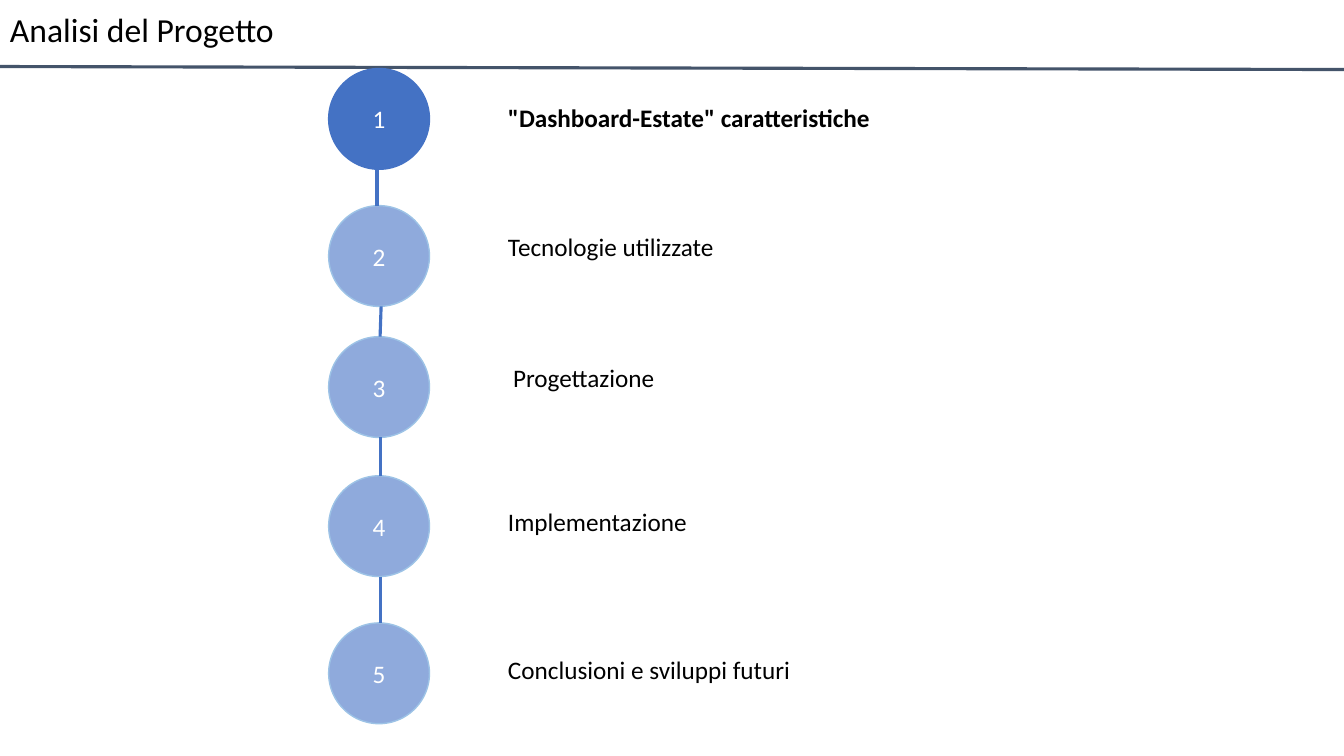
from pptx import Presentation
from pptx.dml.color import RGBColor
from pptx.enum.shapes import MSO_CONNECTOR, MSO_SHAPE
from pptx.enum.text import MSO_ANCHOR, PP_ALIGN
from pptx.oxml.ns import qn
from pptx.util import Inches, Pt
from lxml.etree import SubElement

# Content
TITLE = "Analisi del Progetto"
# label, circle top, label left, label top
STEPS = [
    ('"Dashboard-Estate" caratteristiche', 0.68, 4.94, 0.97),
    ("Tecnologie utilizzate", 2.04, 4.94, 2.25),
    ("Progettazione", 3.34, 4.99, 3.55),
    ("Implementazione", 4.72, 4.94, 4.97),
    ("Conclusioni e sviluppi futuri", 6.18, 4.94, 6.44),
]
# Horizontal start and end of the link below each circle but the last
LINKS = [(3.74, 3.74), (3.78, 3.77), (3.77, 3.77), (3.77, 3.77)]
CURRENT_STEP = 1

CIRCLE_LEFT, CIRCLE_SIZE = 3.26, 1
LABEL_WIDTH, LABEL_HEIGHT = 4.97, 0.4
BLACK, WHITE, SLATE = "000000", "FFFFFF", "44546A"
BLUE, PALE_BLUE, PALE_EDGE = "4472C4", "8FAADC", "9DC3E6"


def paint(color_format, color):
    color_format.rgb = RGBColor.from_string(color)


def write(shape, text, size, color, bold=False):
    para = shape.text_frame.paragraphs[0]
    para.text = text
    para.font.name = "Calibri"
    para.font.size = Pt(size)
    para.font.bold = bold
    paint(para.font.color, color)
    return para


def add_text(page, text, left, top, width, height, size, bold=False):
    box = page.shapes.add_textbox(Inches(left), Inches(top), Inches(width), Inches(height))
    box.text_frame.word_wrap = True
    write(box, text, size, BLACK, bold)
    return box


def add_line(page, start, end, color):
    line = page.shapes.add_connector(
        MSO_CONNECTOR.STRAIGHT, *(Inches(value) for value in start + end))
    line.line.width = Pt(2.25)
    paint(line.line.color, color)
    SubElement(line._element.spPr, qn("a:effectLst"))


def add_circle(page, number, top):
    circle = page.shapes.add_shape(
        MSO_SHAPE.OVAL, Inches(CIRCLE_LEFT), Inches(top),
        Inches(CIRCLE_SIZE), Inches(CIRCLE_SIZE))
    circle.shadow.inherit = False
    current = number == CURRENT_STEP
    circle.fill.solid()
    paint(circle.fill.fore_color, BLUE if current else PALE_BLUE)
    paint(circle.line.color, BLUE if current else PALE_EDGE)
    circle.line.width = Pt(1)
    circle.text_frame.vertical_anchor = MSO_ANCHOR.MIDDLE
    write(circle, str(number), 18, WHITE).alignment = PP_ALIGN.CENTER


deck = Presentation()
deck.slide_width, deck.slide_height = Inches(13.33), Inches(7.5)
page = deck.slides.add_slide(deck.slide_layouts[6])

# Title and rule
title = add_text(page, TITLE, 0, -0.01, 12.41, 0.65, 24)
title.text_frame.vertical_anchor = MSO_ANCHOR.MIDDLE
title.text_frame.paragraphs[0].line_spacing = 0.9
add_line(page, (-0.05, 0.66), (13.34, 0.69), SLATE)

# Numbered steps
for number, (label, circle_top, label_left, label_top) in enumerate(STEPS, 1):
    add_circle(page, number, circle_top)
    add_text(page, label, label_left, label_top, LABEL_WIDTH, LABEL_HEIGHT, 18,
             bold=number == CURRENT_STEP)

# Links from each circle to the next
for (start_x, end_x), upper, lower in zip(LINKS, STEPS, STEPS[1:]):
    add_line(page, (start_x, upper[1] + CIRCLE_SIZE), (end_x, lower[1]), BLUE)

deck.save("out.pptx")
